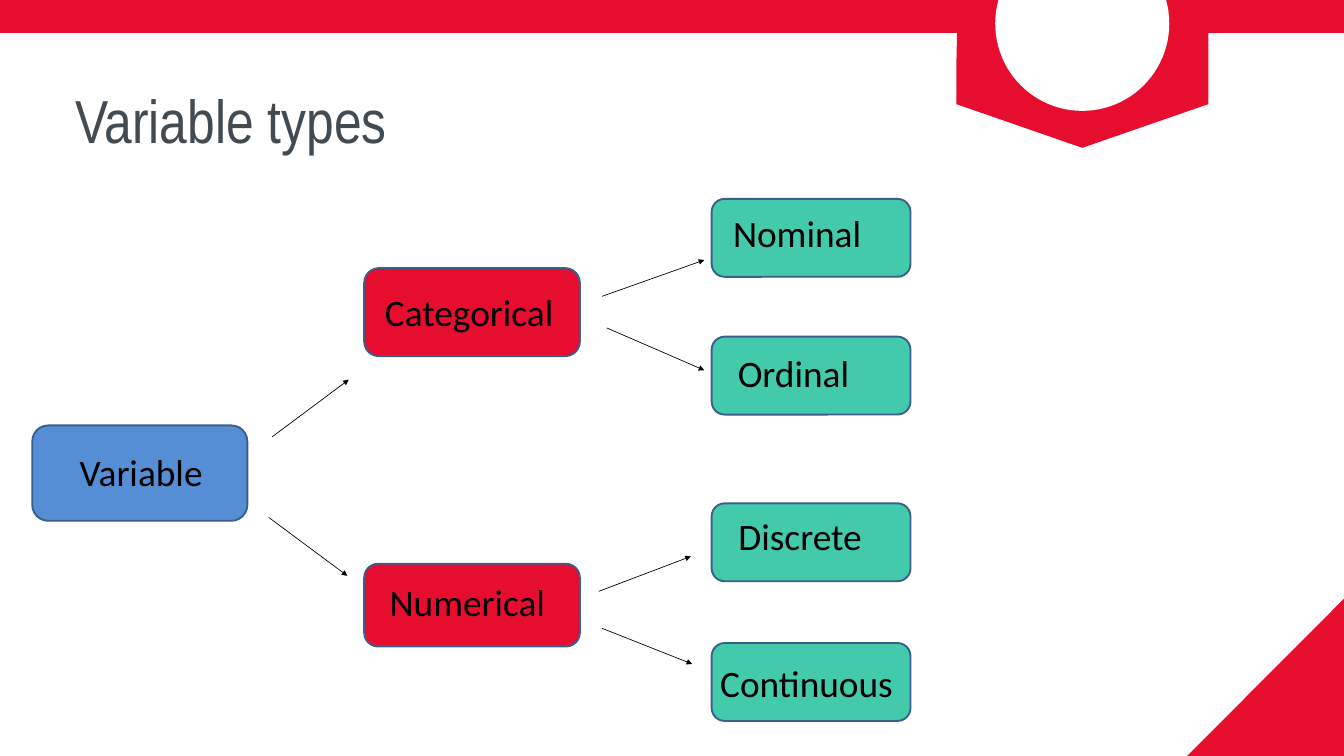
"""Build the slide that shows the tree of variable types."""
from lxml.etree import SubElement
from pptx import Presentation
from pptx.dml.color import RGBColor
from pptx.enum.shapes import MSO_CONNECTOR as Link, MSO_SHAPE as Kind
from pptx.enum.text import MSO_AUTO_SIZE as Auto, PP_ALIGN as Align
from pptx.oxml.ns import qn
from pptx.util import Pt

HUES = {"red": "E60D2E", "blue": "558ED5", "green": "42CAAA", "edge": "3A5F8C",
        "slate": "424A52", "black": "000000", "white": "FFFFFF"}

deck = Presentation()
deck.slide_width, deck.slide_height = Pt(1440), Pt(810)
slide = deck.slides.add_slide(deck.slide_layouts[6])
shapes = slide.shapes


def paint(shape, fill, edge=None):
    shape.shadow.inherit = False
    shape.fill.solid()
    shape.fill.fore_color.rgb = RGBColor.from_string(HUES[fill])
    if edge:
        shape.line.color.rgb = RGBColor.from_string(HUES[edge])
        shape.line.width = Pt(2)
    else:
        shape.line.fill.background()


def write(text, box, size=40, font="Calibri", hue="black", align=Align.LEFT,
          pad=(7.2, 3.6), lead=None):
    frame = shapes.add_textbox(*map(Pt, box)).text_frame
    frame.word_wrap = True
    frame.auto_size = Auto.SHAPE_TO_FIT_TEXT
    frame.margin_left = frame.margin_right = Pt(pad[0])
    frame.margin_top = frame.margin_bottom = Pt(pad[1])
    para = frame.paragraphs[0]
    para.alignment = align
    if lead:
        para.line_spacing = Pt(lead)
    run = para.add_run()
    run.text = text
    run.font.size, run.font.name = Pt(size), font
    run.font.color.rgb = RGBColor.from_string(HUES[hue])


paint(shapes.add_shape(Kind.RECTANGLE, 0, 0, Pt(1440), Pt(35.3)), "red")
write("Variable types", (80.6, 75.6, 498.2, 84.2), size=65, font="Arial Narrow",
      hue="slate", pad=(0, 0), lead=91)

corner = [(1440, 641.5), (1440, 810), (1272, 810)]
badge = [(1294.6, 0), (1294.6, 111.6), (1159.6, 158.4), (1024.6, 111.6),
         (1024.6, 72.7), (1025.3, 40.3), (1025.3, 0)]
for first, *rest in (corner, badge):
    pen = shapes.build_freeform(Pt(first[0]), Pt(first[1]))
    pen.add_line_segments([(Pt(x), Pt(y)) for x, y in rest], close=True)
    paint(pen.convert_to_shape(), "red")
paint(shapes.add_shape(Kind.OVAL, Pt(1066.3), Pt(-68.4), Pt(186.5), Pt(187.2)), "white")

nodes = [
    ("Variable", "blue", (34.6, 455.8, 230.4, 102.2), (46.1, 477.4, 210.2)),
    ("Categorical", "red", (390.2, 287.3, 231.1, 94.3), (405.4, 306, 226.1)),
    ("Numerical", "red", (390.2, 604.1, 231.1, 88.6), (410.4, 617, 199.4)),
]
leaves = [
    ("Nominal", 213.1, (778.3, 221.8, 198)),
    ("Ordinal", 360.7, (783.4, 371.5, 198)),
    ("Discrete", 539.3, (784.1, 546.5, 198)),
    ("Continuous", 689, (764.6, 703.4, 226.1)),
]
nodes += [(name, "green", (762.5, top, 213.1, 83.5), spot) for name, top, spot in leaves]
for name, fill, box, spot in nodes:
    paint(shapes.add_shape(Kind.ROUNDED_RECTANGLE, *map(Pt, box)), fill, "edge")
    write(name, (*spot, 55.4), align=Align.CENTER if name == "Variable" else Align.LEFT)

arrows = [
    (291.6, 468, 373.7, 406.8), (288, 554.4, 372.2, 617),
    (645.1, 317.5, 754.6, 278.6), (650.2, 351.4, 754.6, 396.7),
    (641.5, 633.6, 740.2, 596.2), (645.1, 673.2, 741.6, 711.4),
]
for ends in arrows:
    arrow = shapes.add_connector(Link.STRAIGHT, *map(Pt, ends))
    arrow.line.width = Pt(0.75)
    arrow.line.color.rgb = RGBColor.from_string(HUES["black"])
    SubElement(arrow.line._get_or_add_ln(), qn("a:tailEnd"), type="triangle")
    SubElement(arrow._element.spPr, qn("a:effectLst"))

deck.save("out.pptx")
